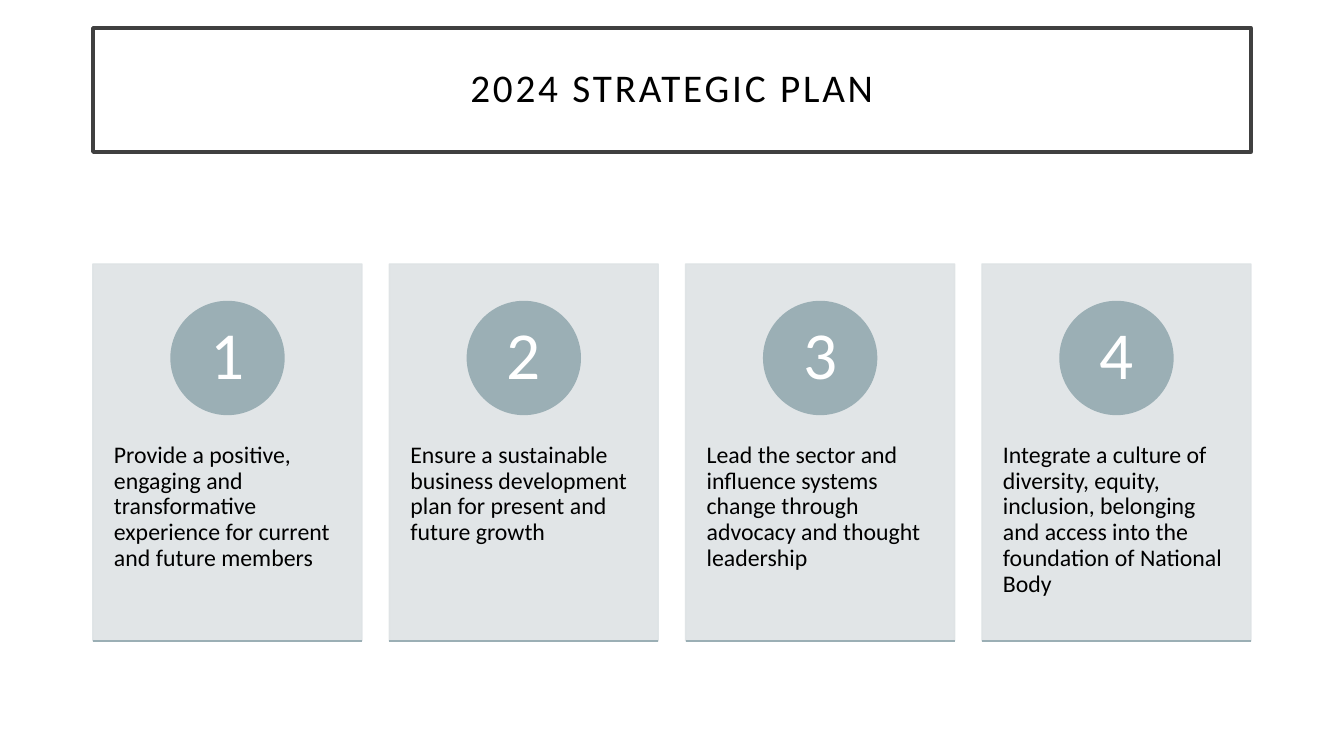
from pptx import Presentation
from pptx.dml.color import RGBColor
from pptx.enum.shapes import MSO_CONNECTOR, MSO_SHAPE
from pptx.enum.text import MSO_ANCHOR, MSO_AUTO_SIZE, PP_ALIGN
from pptx.oxml.ns import qn
from pptx.util import Pt
from lxml.etree import SubElement

SLIDE_WIDTH, SLIDE_HEIGHT = 1344, 756
EMU_PER_PX = 12192000 / SLIDE_WIDTH
FONT = "Calibri"
BLACK = RGBColor(0x00, 0x00, 0x00)
WHITE = RGBColor(0xFF, 0xFF, 0xFF)
CHARCOAL = RGBColor(0x40, 0x40, 0x40)
PALE_GREY = RGBColor(0xDE, 0xE3, 0xE5)
SLATE = RGBColor(0x9B, 0xAF, 0xB5)

GOALS = [
    "Provide a positive, engaging and transformative experience for current and future members",
    "Ensure a sustainable business development plan for present and future growth",
    "Lead the sector and influence systems change through advocacy and thought leadership",
    "Integrate a culture of diversity, equity, inclusion, belonging and access into the "
    "foundation of National Body",
]


def px(length):
    return round(length * EMU_PER_PX)


def place(*box):
    return [px(length) for length in box]


def paint(shape, fill, line, line_width):
    shape.fill.solid()
    shape.fill.fore_color.rgb = fill
    shape.line.color.rgb = line
    shape.line.width = Pt(line_width)


def add_panel(slide, kind, box, color, opacity=100):
    """Add a shape whose fill and outline share one colour and opacity in percent."""
    panel = slide.shapes.add_shape(kind, *place(*box))
    panel.shadow.inherit = False
    paint(panel, color, color, 1)
    if opacity < 100:
        for rgb in panel._element.spPr.iter(qn("a:srgbClr")):
            SubElement(rgb, qn("a:alpha"), val=str(opacity * 1000))


def write(frame, text, size, color, align, anchor):
    frame.word_wrap = True
    frame.auto_size = MSO_AUTO_SIZE.NONE
    frame.vertical_anchor = anchor
    para = frame.paragraphs[0]
    para.text = text
    para.alignment = align
    para.line_spacing = 0.9
    para.font.name = FONT
    para.font.size = Pt(size)
    para.font.color.rgb = color


def add_text(slide, box, insets, *style):
    frame = slide.shapes.add_textbox(*place(*box)).text_frame
    frame.margin_left = frame.margin_right = px(insets[0])
    frame.margin_top = frame.margin_bottom = px(insets[1])
    write(frame, *style)


def add_title(slide, text, box):
    title = slide.shapes.title
    title.left, title.top, title.width, title.height = place(*box)
    paint(title, WHITE, CHARCOAL, 2.5)
    write(title.text_frame, text, 28, BLACK, PP_ALIGN.CENTER, MSO_ANCHOR.MIDDLE)
    span = title.text_frame.paragraphs[0].runs[0]
    span._r.get_or_add_rPr().set("spc", "200")


def add_baseline(slide, left, top, width):
    rule = slide.shapes.add_connector(
        MSO_CONNECTOR.STRAIGHT, *place(left, top, left + width, top))
    rule.line.color.rgb = SLATE
    rule.line.width = Pt(1)
    SubElement(rule._element.spPr, qn("a:effectLst"))


def add_goal_card(slide, number, goal, box):
    left, top, width, height = box
    circle, digit = 113, 79
    middle_x, middle_y = left + width / 2, top + 94
    add_panel(slide, MSO_SHAPE.RECTANGLE, box, PALE_GREY, opacity=90)
    add_text(slide, (left, top + 143, width, 227), (21, 36),
             goal, 17, BLACK, PP_ALIGN.LEFT, MSO_ANCHOR.TOP)
    add_panel(slide, MSO_SHAPE.OVAL,
              (middle_x - circle / 2, middle_y - circle / 2, circle, circle), SLATE)
    add_text(slide, (middle_x - digit / 2, middle_y - digit / 2, digit, digit), (9, 1),
             str(number), 48, WHITE, PP_ALIGN.CENTER, MSO_ANCHOR.MIDDLE)
    add_baseline(slide, left, top + height, width)


def add_goal_row(slide, goals, box):
    left, top, width, height = box
    card_width = 269
    pitch = (width - card_width) / (len(goals) - 1)
    for index, goal in enumerate(goals):
        add_goal_card(slide, index + 1, goal,
                      (left + index * pitch, top, card_width, height))


def main():
    deck = Presentation()
    deck.slide_width, deck.slide_height = place(SLIDE_WIDTH, SLIDE_HEIGHT)
    slide = deck.slides.add_slide(deck.slide_layouts.get_by_name("Title Only"))
    add_title(slide, "2024 STRATEGIC PLAN", (93, 28, 1158, 124))
    add_goal_row(slide, GOALS, (93, 264, 1158, 377))
    deck.save("out.pptx")


if __name__ == "__main__":
    main()
